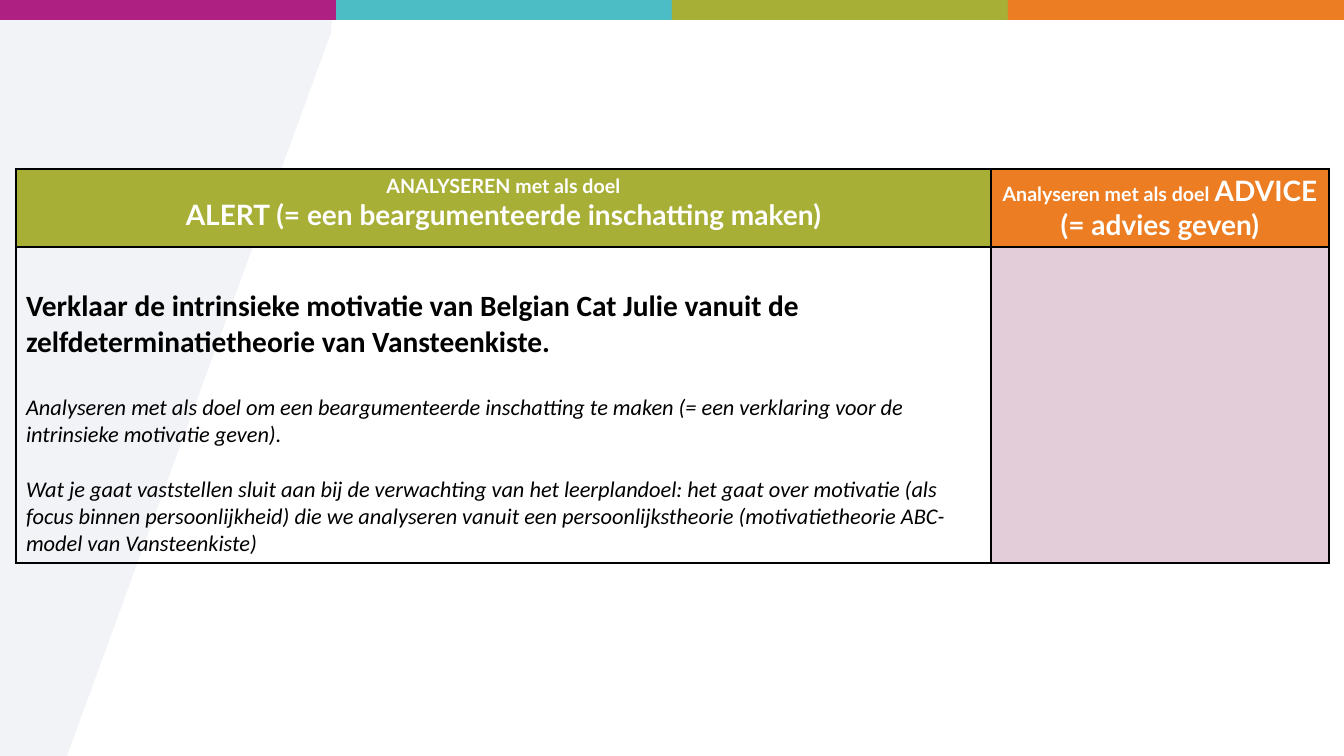
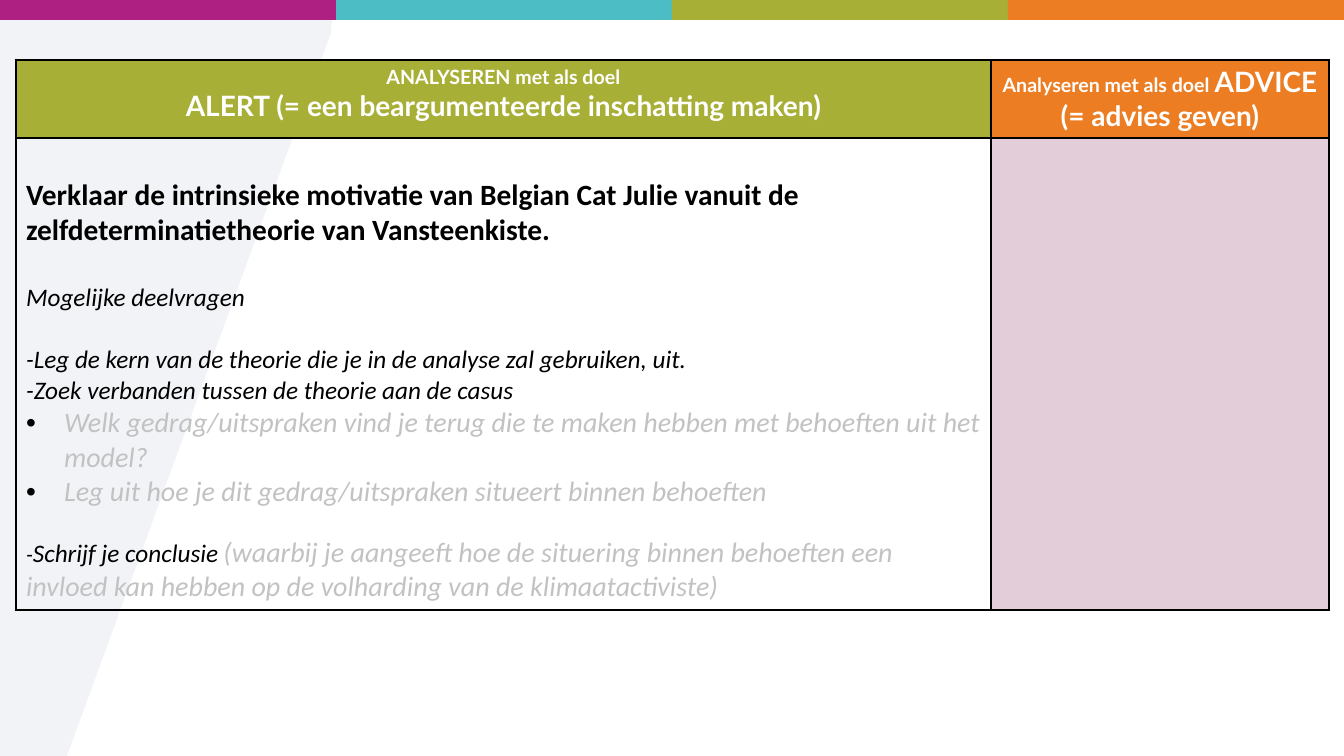
from dataclasses import dataclass

from lxml.etree import SubElement
from pptx import Presentation
from pptx.dml.color import RGBColor
from pptx.enum.shapes import MSO_SHAPE
from pptx.enum.text import PP_ALIGN
from pptx.oxml import parse_xml
from pptx.oxml.ns import nsdecls, qn
from pptx.slide import Slide
from pptx.table import _Cell
from pptx.util import Emu, Pt

# Slide grid
WIDTH, HEIGHT = 1344, 756
SCALE = 12192000 / WIDTH

# Shared look
PURPLE, TEAL, GREEN, ORANGE = "AE2081", "4CBCC5", "A8AF37", "EC7D23"
BLACK, WHITE, GREY = "000000", "FFFFFF", "C2C2C2"
PINK, PALE = "E3CDD8", "E8ECF0"
BAR_HEIGHT = 20
TABLE_LEFT, COLUMNS, HEADER_HEIGHT = 16, (975, 338), 78
WEDGE = [(0, 5), (311, 5), (325, 11), (332, 20), (331, 33), (67, HEIGHT), (0, HEIGHT)]


@dataclass(frozen=True)
class Span:
    text: str
    size: int
    color: str = BLACK
    bold: bool = False
    italic: bool = False
    font: str = "Calibri"


@dataclass(frozen=True)
class Para:
    spans: tuple[Span, ...]
    before: int = 0
    bullet: bool = False
    centred: bool = False


@dataclass(frozen=True)
class Page:
    top: int
    body_height: int
    body_margin: int
    body: tuple[Para, ...]


def px(n: float) -> Emu:
    return Emu(round(n * SCALE))


def rgb(value: str) -> RGBColor:
    return RGBColor.from_string(value)


def head(text: str, size: int) -> Span:
    return Span(text, size, WHITE, bold=True, font="Lato")


def note(text: str, size: int, color: str = BLACK) -> Span:
    return Span(text, size, color, italic=True)


# Content
HEADERS = (
    (GREEN, (
        Para((head("ANALYSEREN met als doel", 14),), centred=True),
        Para((head("ALERT (= een beargumenteerde inschatting maken)", 20),), centred=True),
    )),
    (ORANGE, (
        Para((head("Analyseren met als doel ", 14), head("ADVICE (= advies geven)", 20)),
             centred=True),
    )),
)
QUESTION = Para((Span(
    "Verklaar de intrinsieke motivatie van Belgian Cat Julie vanuit de "
    "zelfdeterminatietheorie van Vansteenkiste.", 21, bold=True),))
PAGES = (
    Page(169, 316, 41, (
        QUESTION,
        Para((note("Analyseren met als doel om een beargumenteerde inschatting te maken "
                   "(= een verklaring voor de intrinsieke motivatie geven).", 16),), before=34),
        Para((note("Wat je gaat vaststellen sluit aan bij de verwachting van het leerplandoel: "
                   "het gaat over motivatie (als focus binnen persoonlijkheid) die we analyseren "
                   "vanuit een persoonlijkstheorie (motivatietheorie ABC-model van "
                   "Vansteenkiste)", 16),), before=27),
    )),
    Page(60, 472, 39, (
        QUESTION,
        Para((note("Mogelijke deelvragen", 18),), before=34),
        Para((note("-Leg de kern van de theorie die je in de analyse zal gebruiken, uit.", 18),),
             before=31),
        Para((note("-Zoek verbanden tussen de theorie aan de casus", 18),)),
        Para((note("Welk gedrag/uitspraken vind je terug die te maken hebben met behoeften "
                   "uit het model?", 20, GREY),), bullet=True),
        Para((note("Leg uit hoe je dit gedrag/uitspraken situeert binnen behoeften", 20, GREY),),
             bullet=True),
        Para((note("-", 16), note("Schrijf je conclusie", 18), note(" ", 16),
              note("(waarbij je aangeeft hoe de situering binnen behoeften een invloed kan "
                   "hebben op de volharding van de klimaatactiviste)", 20, GREY)), before=27),
    )),
)


# Background wedge and colour bar
def draw_background(s: Slide) -> None:
    builder = s.shapes.build_freeform(*WEDGE[0], scale=SCALE)
    builder.add_line_segments(WEDGE[1:], close=True)
    wedge = builder.convert_to_shape()
    paint(wedge, PALE)
    color = wedge.fill._xPr.find(qn("a:solidFill"))[0]
    SubElement(color, qn("a:alpha"), val="59000")

    colors = (PURPLE, TEAL, GREEN, ORANGE)
    step = WIDTH // len(colors)
    for i, value in enumerate(colors):
        paint(s.shapes.add_shape(MSO_SHAPE.RECTANGLE, px(i * step), 0,
                                 px(step), px(BAR_HEIGHT)), value)


def paint(sp, color: str) -> None:
    sp.shadow.inherit = False
    sp.fill.solid()
    sp.fill.fore_color.rgb = rgb(color)
    sp.line.fill.background()


# Table cells
def add_bullet(p) -> None:
    pPr = p._p.get_or_add_pPr()
    pPr.set("marL", str(px(38)))
    pPr.set("indent", str(px(-38)))
    SubElement(SubElement(pPr, qn("a:buClr")), qn("a:srgbClr"), val=BLACK)
    SubElement(pPr, qn("a:buFont"), typeface="Arial")
    SubElement(pPr, qn("a:buChar"), char="•")


def write(cell: _Cell, paras: tuple[Para, ...]) -> None:
    tf = cell.text_frame
    for i, para in enumerate(paras):
        p = tf.add_paragraph() if i else tf.paragraphs[0]
        if para.bullet:
            add_bullet(p)
        if para.centred:
            p.alignment = PP_ALIGN.CENTER
        if para.before:
            p.space_before = px(para.before)
        for span in para.spans:
            r = p.add_run()
            r.text = span.text
            r.font.name = span.font
            r.font.size = Pt(span.size)
            r.font.bold = span.bold
            r.font.italic = span.italic
            r.font.color.rgb = rgb(span.color)


def format_cell(cell: _Cell, fill: str | None) -> None:
    if fill:
        cell.fill.solid()
        cell.fill.fore_color.rgb = rgb(fill)
    else:
        cell.fill.background()
    tcPr = cell._tc.get_or_add_tcPr()
    for i, side in enumerate("LRTB"):
        tcPr.insert(i, parse_xml(
            f'<a:ln{side} {nsdecls("a")} w="{Pt(1)}"><a:solidFill>'
            f'<a:srgbClr val="{BLACK}"/></a:solidFill></a:ln{side}>'))


def draw_table(s: Slide, page: Page) -> None:
    heights = (HEADER_HEIGHT, page.body_height)
    table = s.shapes.add_table(len(heights), len(COLUMNS), px(TABLE_LEFT), px(page.top),
                               px(sum(COLUMNS)), px(sum(heights))).table
    table.first_row = table.horz_banding = False
    for column, width in zip(table.columns, COLUMNS):
        column.width = px(width)
    for row, height in zip(table.rows, heights):
        row.height = px(height)

    for i, (color, paras) in enumerate(HEADERS):
        format_cell(table.cell(0, i), color)
        write(table.cell(0, i), paras)
    body = table.cell(1, 0)
    format_cell(body, None)
    body.margin_top = px(page.body_margin)
    write(body, page.body)
    format_cell(table.cell(1, 1), PINK)


def main() -> None:
    prs = Presentation()
    prs.slide_width, prs.slide_height = px(WIDTH), px(HEIGHT)
    for page in PAGES:
        s = prs.slides.add_slide(prs.slide_layouts[6])
        draw_background(s)
        draw_table(s, page)
    prs.save("out.pptx")


if __name__ == "__main__":
    main()
